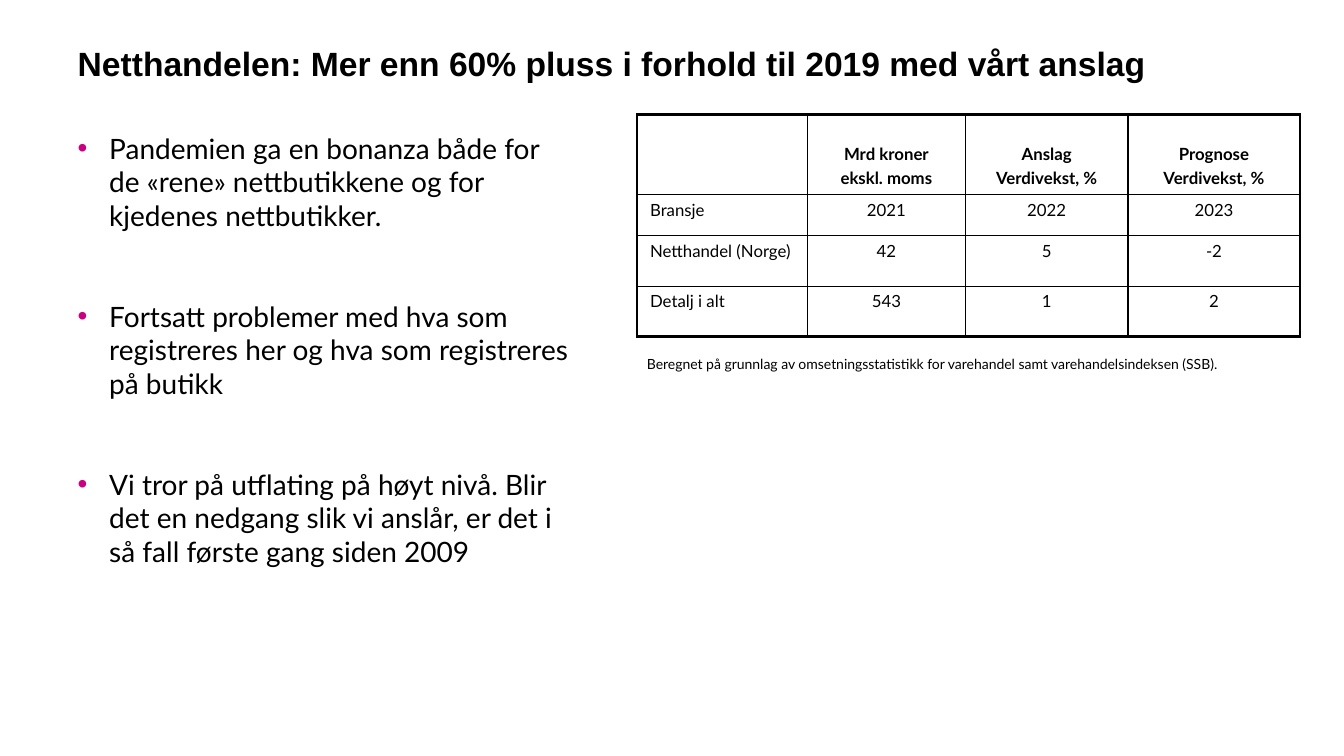
"""Build the slide on Norwegian online retail with bullets and a forecast table."""
import pptx
import pptx.dml.color
import pptx.enum.text
import pptx.oxml.ns
import pptx.util
from lxml import etree

Pt = pptx.util.Pt
ALIGN = pptx.enum.text.PP_ALIGN
ANCHOR = pptx.enum.text.MSO_ANCHOR
BLACK, MAGENTA = "000000", "C9007F"

TITLE = "Netthandelen: Mer enn 60% pluss i forhold til 2019 med vårt anslag"
BULLETS = [
    "Pandemien ga en bonanza både for de «rene» nettbutikkene og for kjedenes nettbutikker.",
    "Fortsatt problemer med hva som registreres her og hva som registreres på butikk",
    "Vi tror på utflating på høyt nivå. Blir det en nedgang slik vi anslår, "
    "er det i så fall første gang siden 2009",
]
TABLE = [
    ["", "Mrd kroner\nekskl. moms", "Anslag\nVerdivekst, %", "Prognose\nVerdivekst, %"],
    ["Bransje", "2021", "2022", "2023"],
    ["Netthandel (Norge)", "42", "5", "-2"],
    ["Detalj i alt", "543", "1", "2"],
]
NOTE = "Beregnet på grunnlag av omsetningsstatistikk for varehandel samt varehandelsindeksen (SSB)."

LEFT, TABLE_LEFT, TABLE_TOP = 55.5, 455, 82
COLUMN_WIDTHS = [121.7, 113, 116, 123]
ROW_HEIGHTS = [57, 29.4, 36, 36]
BULLET_INDENT, BULLET_GAP = 22.5, 48
THIN, THICK = 1, 2.25


def add_element(parent, tag, **attributes):
    return etree.SubElement(parent, pptx.oxml.ns.qn(tag), attributes)


def set_font(paragraph, size, name="Lato", bold=False, color=BLACK):
    font = paragraph.font
    font.size, font.name, font.bold = Pt(size), name, bold
    font.color.rgb = pptx.dml.color.RGBColor.from_string(color)


def add_text_box(slide, left, top, width, height, margins=(0, 0)):
    shape = slide.shapes.add_textbox(Pt(left), Pt(top), Pt(width), Pt(height))
    frame = shape.text_frame
    frame.word_wrap = True
    frame.margin_left = frame.margin_right = Pt(margins[0])
    frame.margin_top = frame.margin_bottom = Pt(margins[1])
    return frame


def add_bullet(paragraph):
    properties = paragraph._p.get_or_add_pPr()
    properties.set("marL", str(Pt(BULLET_INDENT)))
    properties.set("indent", str(-Pt(BULLET_INDENT)))
    color = add_element(properties, "a:buClr")
    add_element(color, "a:srgbClr", val=MAGENTA)
    add_element(properties, "a:buFont", typeface="Arial")
    add_element(properties, "a:buChar", char="•")


def set_borders(cell, widths):
    properties = cell._tc.get_or_add_tcPr()
    for position, (side, width) in enumerate(widths.items()):
        line = add_element(properties, f"a:ln{side}", w=str(Pt(width)))
        fill = add_element(line, "a:solidFill")
        add_element(fill, "a:srgbClr", val=BLACK)
        properties.insert(position, line)


def add_title(slide):
    frame = add_text_box(slide, LEFT, 21.6, 850, 43.2)
    frame.vertical_anchor = ANCHOR.MIDDLE
    paragraph = frame.paragraphs[0]
    paragraph.text = TITLE
    paragraph.line_spacing = Pt(33)
    set_font(paragraph, 24, "Arial", True)


def add_bullets(slide):
    frame = add_text_box(slide, LEFT, 93.6, 356.4, 383)
    frame.text = "\n".join(BULLETS)
    for index, paragraph in enumerate(frame.paragraphs):
        paragraph.space_before = Pt(BULLET_GAP if index else 0)
        add_bullet(paragraph)
        set_font(paragraph, 20)


def add_forecast_table(slide):
    table = slide.shapes.add_table(
        len(TABLE), len(COLUMN_WIDTHS), Pt(TABLE_LEFT), Pt(TABLE_TOP),
        Pt(sum(COLUMN_WIDTHS)), Pt(sum(ROW_HEIGHTS))).table
    table.first_row = table.horz_banding = False
    for column, width in zip(table.columns, COLUMN_WIDTHS):
        column.width = Pt(width)
    for row, height in zip(table.rows, ROW_HEIGHTS):
        row.height = Pt(height)
    for row, texts in enumerate(TABLE):
        for column, text in enumerate(texts):
            header = row == 0
            cell = table.cell(row, column)
            cell.fill.background()
            cell.margin_left = cell.margin_right = Pt(9.4)
            cell.margin_top, cell.margin_bottom = Pt(3.6), Pt(5)
            cell.vertical_anchor = ANCHOR.BOTTOM if header else ANCHOR.TOP
            cell.text = text
            for index, paragraph in enumerate(cell.text_frame.paragraphs):
                paragraph.alignment = ALIGN.CENTER if column else ALIGN.LEFT
                paragraph.space_before = Pt(2.4 if index else 0)
                set_font(paragraph, 12, bold=header)
            set_borders(cell, {
                "L": THIN,
                "R": THICK if column == len(texts) - 1 else THIN,
                "T": THICK if header else THIN,
                "B": THICK if row == len(TABLE) - 1 else THIN,
            })


def add_note(slide):
    frame = add_text_box(slide, TABLE_LEFT, 250.6, 486.7, 31.7, (7.2, 3.6))
    frame.text = NOTE
    set_font(frame.paragraphs[0], 10)


def main():
    presentation = pptx.Presentation()
    presentation.slide_width, presentation.slide_height = Pt(960), Pt(540)
    slide = presentation.slides.add_slide(presentation.slide_layouts[6])
    add_title(slide)
    add_bullets(slide)
    add_forecast_table(slide)
    add_note(slide)
    presentation.save("out.pptx")


if __name__ == "__main__":
    main()
